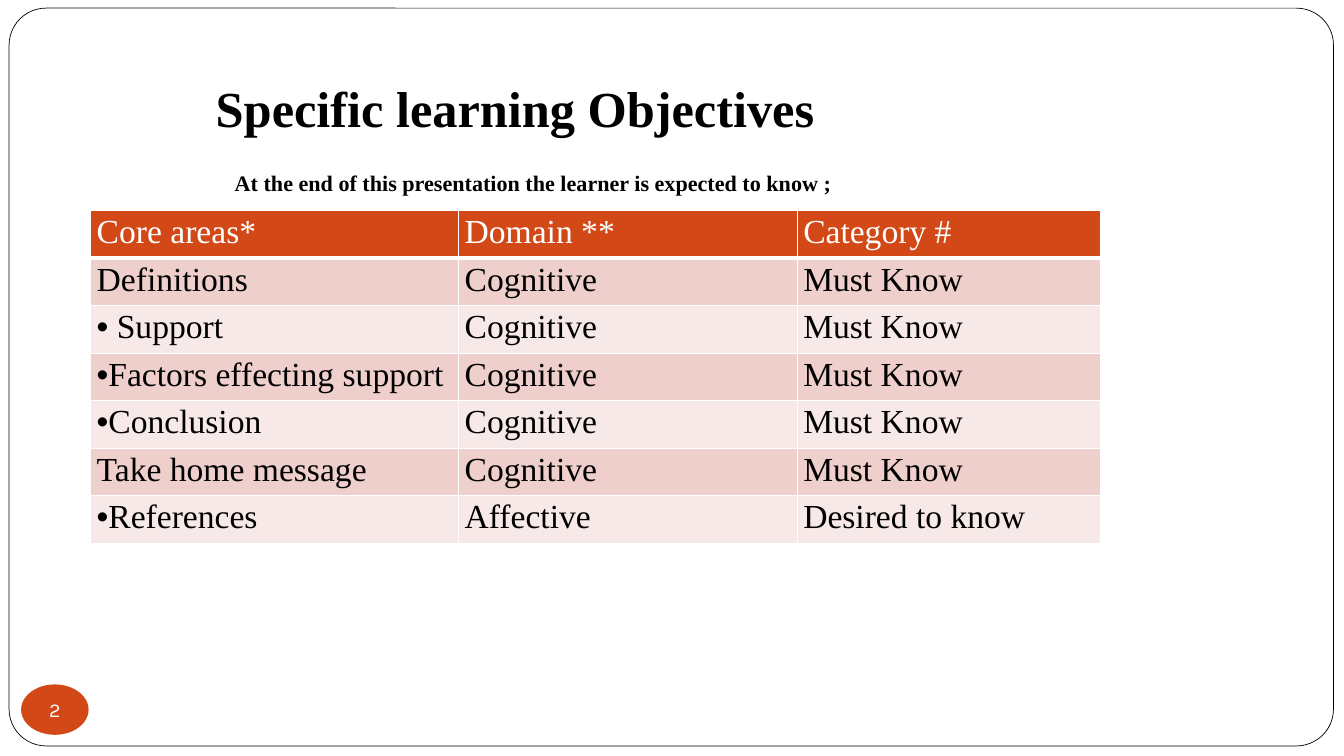
from dataclasses import dataclass

from lxml.etree import SubElement
from pptx import Presentation
from pptx.dml.color import RGBColor
from pptx.enum.shapes import MSO_SHAPE
from pptx.enum.text import MSO_ANCHOR, MSO_AUTO_SIZE, PP_ALIGN
from pptx.oxml.ns import qn
from pptx.util import Pt


@dataclass(frozen=True)
class Theme:
    black: RGBColor = RGBColor.from_string("000000")
    white: RGBColor = RGBColor.from_string("FFFFFF")
    accent: RGBColor = RGBColor.from_string("D34817")
    bands: tuple = (RGBColor.from_string("EFCFCC"), RGBColor.from_string("F7E9E8"))
    serif: str = "Times New Roman"
    sans: str = "Karla"
    title_size: float = 36
    table_size: float = 24
    intro_size: float = 15.8
    number_size: float = 14


def set_font(paragraph, name, size, color, bold=False):
    paragraph.font.name = name
    paragraph.font.size = Pt(size)
    paragraph.font.color.rgb = color
    paragraph.font.bold = bold


def add_border(cell, side, width):
    properties = cell._tc.get_or_add_tcPr()
    line = SubElement(properties, qn(f"a:ln{side}"), w=str(Pt(width)))
    fill = SubElement(line, qn("a:solidFill"))
    SubElement(fill, qn("a:srgbClr"), val=str(theme.white))


theme = Theme()
presentation = Presentation()
presentation.slide_width = Pt(960)
presentation.slide_height = Pt(540)
slide = presentation.slides.add_slide(presentation.slide_layouts[5])

title = slide.shapes.title
title.left, title.top, title.width, title.height = Pt(146.9), Pt(59.8), Pt(539.3), Pt(45.4)
title_frame = title.text_frame
title_frame.text = "Specific learning Objectives"
title_frame.auto_size = MSO_AUTO_SIZE.NONE
title_frame.vertical_anchor = MSO_ANCHOR.BOTTOM
title_frame.margin_bottom = Pt(7.2)
title_frame.paragraphs[0].alignment = PP_ALIGN.LEFT
set_font(title_frame.paragraphs[0], theme.serif, theme.title_size, theme.black, True)

border = slide.shapes.add_shape(MSO_SHAPE.ROUNDED_RECTANGLE, Pt(6.5), Pt(5.8), Pt(946), Pt(527))
border.shadow.inherit = False
border.adjustments[0] = 0.05
border.fill.solid()
border.fill.fore_color.rgb = theme.white
border.line.color.rgb = theme.black
border.line.width = Pt(0.5)
title.element.addprevious(border.element)

badge = slide.shapes.add_shape(MSO_SHAPE.OVAL, Pt(15.1), Pt(488.9), Pt(48.2), Pt(36))
badge.shadow.inherit = False
badge.fill.solid()
badge.fill.fore_color.rgb = theme.accent
badge.line.fill.background()
badge_frame = badge.text_frame
badge_frame.text = "2"
badge_frame.word_wrap = False
badge_frame.vertical_anchor = MSO_ANCHOR.MIDDLE
badge_frame.margin_left = badge_frame.margin_right = Pt(0)
badge_frame.margin_top = badge_frame.margin_bottom = Pt(0)
badge_frame.paragraphs[0].alignment = PP_ALIGN.CENTER
set_font(badge_frame.paragraphs[0], theme.sans, theme.number_size, theme.white)

objectives = [
    ("Core areas*", "Domain **", "Category #"),
    ("Definitions", "Cognitive", "Must Know"),
    (" Support", "Cognitive", "Must Know"),
    ("Factors effecting support", "Cognitive", "Must Know"),
    ("Conclusion", "Cognitive", "Must Know"),
    ("Take home message", "Cognitive", "Must Know"),
    ("References", "Affective", "Desired to know"),
]
bulleted_rows = {2, 3, 4, 6}
column_widths = (262.8, 241.9, 216.7)
row_height = 33.95

table = slide.shapes.add_table(
    len(objectives), len(column_widths), Pt(64.8), Pt(150.5),
    Pt(sum(column_widths)), Pt(row_height * len(objectives)),
).table
for column, width in zip(table.columns, column_widths):
    column.width = Pt(width)

for row_index, texts in enumerate(objectives):
    table.rows[row_index].height = Pt(row_height)
    is_header = row_index == 0
    for column_index, text in enumerate(texts):
        cell = table.cell(row_index, column_index)
        cell.text = text
        cell.margin_left = cell.margin_right = Pt(4.3)
        cell.margin_top = cell.margin_bottom = Pt(2.2)
        for side in "LRTB":
            add_border(cell, side, 3 if is_header and side == "B" else 1)
        cell.fill.solid()
        cell.fill.fore_color.rgb = theme.accent if is_header else theme.bands[(row_index - 1) % 2]
        paragraph = cell.text_frame.paragraphs[0]
        if column_index == 0 and row_index in bulleted_rows:
            properties = paragraph._p.get_or_add_pPr()
            SubElement(properties, qn("a:buFont"), typeface="Arial")
            SubElement(properties, qn("a:buChar"), char="•")
        set_font(paragraph, theme.serif, theme.table_size, theme.white if is_header else theme.black)

intro = slide.shapes.add_textbox(Pt(160.6), Pt(117.4), Pt(535.7), Pt(26.6))
intro_frame = intro.text_frame
intro_frame.word_wrap = True
intro_frame.auto_size = MSO_AUTO_SIZE.SHAPE_TO_FIT_TEXT
intro_frame.text = "At the end of this presentation the learner is expected to know ;"
set_font(intro_frame.paragraphs[0], theme.serif, theme.intro_size, theme.black, True)

presentation.save("out.pptx")
